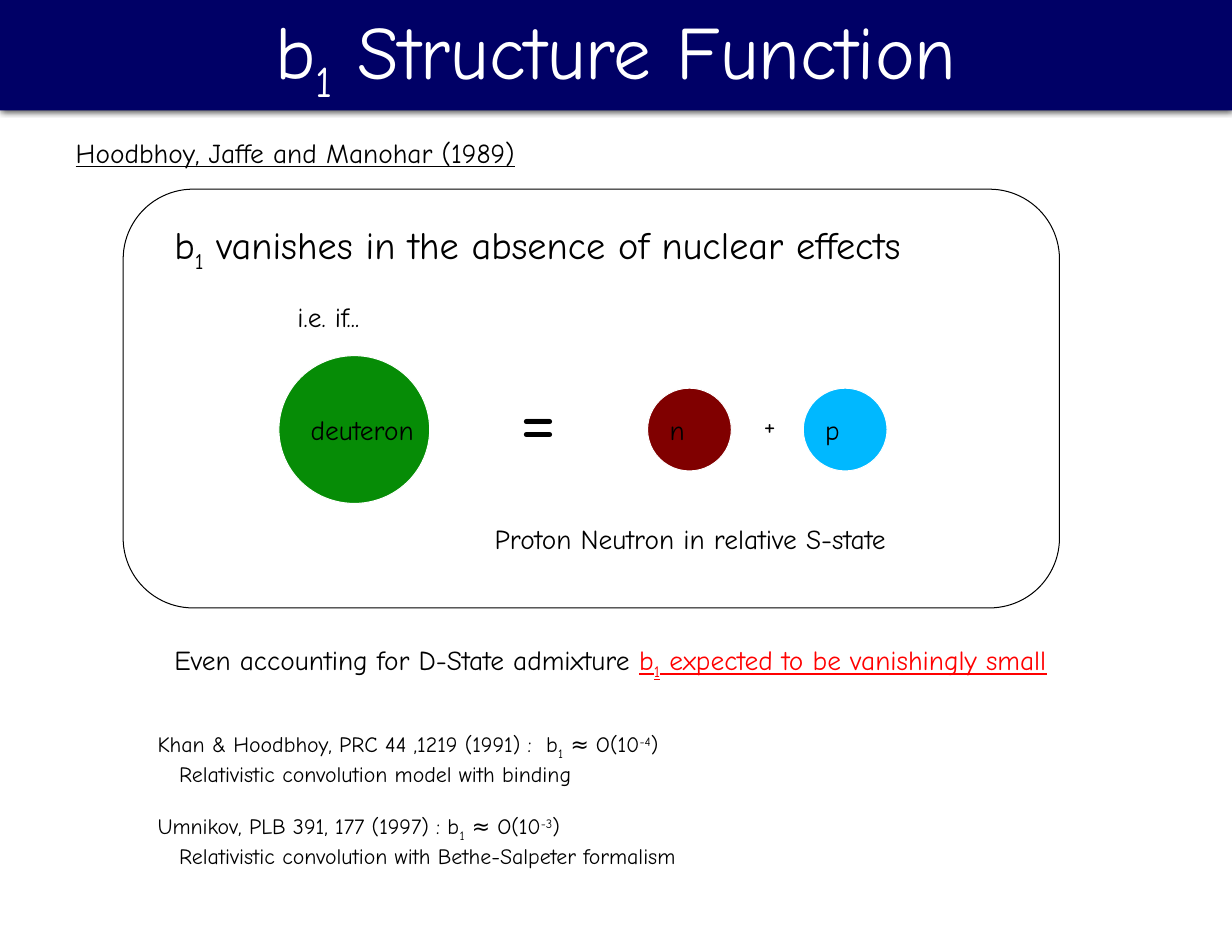
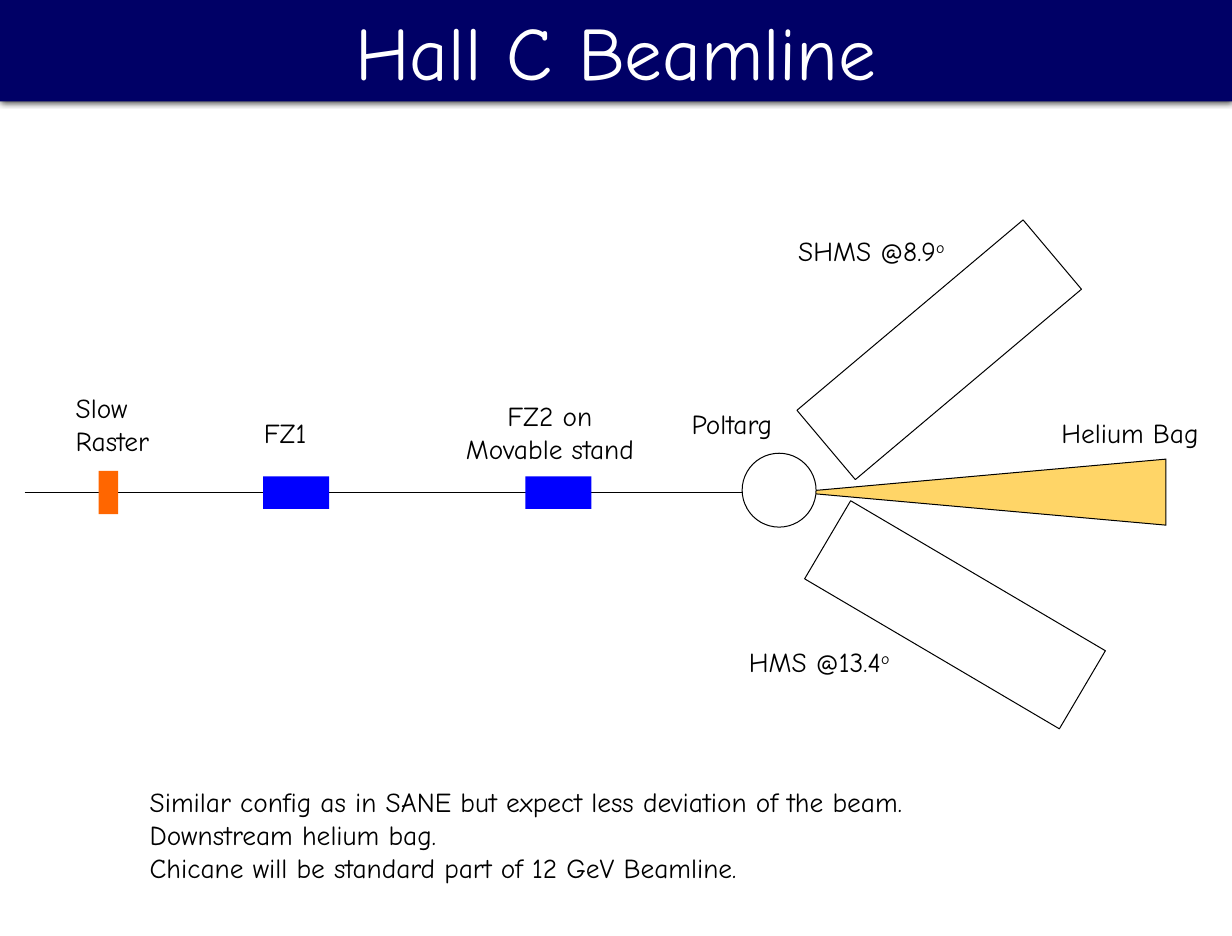
from lxml import etree
from pptx import Presentation
from pptx.dml.color import RGBColor
from pptx.enum import shapes, text
from pptx.oxml.ns import qn
from pptx.util import Inches, Pt

FONT = "Comic Neue"
NAVY, WHITE, BLACK, RED = "000066", "FFFFFF", "000000", "FF0000"
GREEN, MAROON, SKY = "068C06", "800000", "00B8FF"
ORANGE, BLUE, GOLD = "FF6600", "0000FF", "FFD567"
SLIDE_WIDTH, SLIDE_HEIGHT = 12.5, 9.5
KIND = shapes.MSO_SHAPE
CENTER, LEFT = text.PP_ALIGN.CENTER, text.PP_ALIGN.LEFT
BASELINES = {"sub": "-25000", "sup": "30000"}

SUBSCRIPT_ONE = ("1", "sub")

STRUCTURE_TITLE = ["b", SUBSCRIPT_ONE, " Structure Function"]
STRUCTURE_TEXTS = [
    ((0.67, 1.33, 4.85, 0.44), 20, [[("Hoodbhoy, Jaffe and Manohar (1989)", "underline")]]),
    ((1.67, 2.2, 8.22, 0.5), 28,
     [["b", SUBSCRIPT_ONE, " vanishes in the absence of nuclear effects"]]),
    ((2.92, 3, 1.2, 0.44), 20, [["i.e. if..."]]),
    ((5.17, 3.67, 0.8, 1.12), 60, [["="]]),
    ((7.65, 4.09, 0.4, 0.44), 20, [["+"]]),
    ((4.92, 5.25, 4.48, 0.44), 20, [["Proton Neutron in relative S-state"]]),
    ((1.67, 6.48, 9.72, 0.44), 20,
     [["Even accounting for D-State admixture ", ("b", "red underline"),
       ("1", "red underline sub"), (" expected to be vanishingly small", "red underline")]]),
]
NUCLEI = [
    ("deuteron", (2.83, 3.61, 1.53, 1.5), GREEN),
    ("n", (6.57, 3.94, 0.85, 0.84), MAROON),
    ("p", (8.15, 3.94, 0.85, 0.84), SKY),
]
PREDICTIONS = [
    ("Khan & Hoodbhoy, PRC 44 ,1219 (1991) :  b", "-4",
     "Relativistic convolution model with binding"),
    ("Umnikov, PLB 391, 177 (1997) : b", "-3",
     "Relativistic convolution with Bethe-Salpeter formalism"),
]

BEAM_TITLE = ["Hall C Beamline"]
BEAM_Y = 5
BEAM_TEXTS = [
    ((0.67, 3.92, 1.2, 0.78), LEFT, [["Slow"], ["Raster"]]),
    ((2.58, 4.17, 0.8, 0.44), LEFT, [["FZ1"]]),
    ((4.58, 4, 2, 0.78), CENTER, [["FZ2 on"], ["Movable stand"]]),
    ((6.92, 4.08, 1.2, 0.44), LEFT, [["Poltarg"]]),
    ((10.67, 4.17, 1.75, 0.44), LEFT, [["Helium Bag"]]),
    ((8, 2.33, 1.85, 0.44), LEFT, [["SHMS @8.9", ("o", "sup")]]),
    ((7.5, 6.5, 1.85, 0.44), LEFT, [["HMS @13.4", ("o", "sup")]]),
    ((1.42, 7.92, 8.39, 1.11), LEFT,
     [["Similar config as in SANE but expect less deviation of the beam."],
      ["Downstream helium bag."],
      ["Chicane will be standard part of 12 GeV Beamline."]]),
]
BEAM_ELEMENTS = [
    (1, 0.2, 0.44, ORANGE),
    (2.67, 0.67, 0.33, BLUE),
    (5.33, 0.67, 0.33, BLUE),
]
DETECTORS = [
    (KIND.ISOSCELES_TRIANGLE, (9.62, 3.12, 0.67, 3.75), GOLD, 270),
    (KIND.RECTANGLE, (8.03, 3.09, 3, 0.92), None, 319.9),
    (KIND.RECTANGLE, (8.19, 5.78, 3, 0.92), None, 30.5),
    (KIND.OVAL, (7.53, 4.6, 0.75, 0.75), WHITE, 0),
]


def color(value):
    return RGBColor.from_string(value)


def write_runs(paragraph, parts, size, ink=BLACK):
    for part in parts:
        words, style = (part, "") if isinstance(part, str) else part
        styles = style.split()
        run = paragraph.add_run()
        run.text = words
        font = run.font
        font.name, font.size = FONT, Pt(size)
        font.color.rgb = color(RED if "red" in styles else ink)
        if "underline" in styles:
            font.underline = True
        for name in BASELINES.keys() & set(styles):
            font._element.set("baseline", BASELINES[name])


def add_text(slide, box, size, paragraphs, align=LEFT):
    frame = slide.shapes.add_textbox(*map(Inches, box)).text_frame
    frame.word_wrap = True
    for index, parts in enumerate(paragraphs):
        paragraph = frame.add_paragraph() if index else frame.paragraphs[0]
        paragraph.alignment = align
        write_runs(paragraph, parts, size)
    return frame


def add_shape(slide, kind, box, fill=None, line=None, rotation=0):
    shape = slide.shapes.add_shape(kind, *map(Inches, box))
    shape.rotation = rotation
    if fill:
        shape.fill.solid()
        shape.fill.fore_color.rgb = color(fill)
    else:
        shape.fill.background()
    if line:
        shape.line.color.rgb = color(line)
        shape.line.width = Pt(0.75)
    else:
        shape.line.fill.background()
    shape.shadow.inherit = False
    return shape


def add_slide(presentation, title, band_height):
    slide = presentation.slides.add_slide(presentation.slide_layouts[6])
    band = add_shape(slide, KIND.RECTANGLE, (0, 0, SLIDE_WIDTH, band_height), NAVY)
    effects = band._element.spPr.find(qn("a:effectLst"))
    shadow = etree.SubElement(effects, qn("a:outerShdw"), blurRad=str(Pt(5)), dist="0", dir="0")
    tint = etree.SubElement(shadow, qn("a:srgbClr"), val=BLACK)
    etree.SubElement(tint, qn("a:alpha"), val="75000")
    frame = band.text_frame
    frame.vertical_anchor = text.MSO_ANCHOR.MIDDLE
    frame.margin_top = frame.margin_bottom = Inches(0.06)
    frame.paragraphs[0].alignment = CENTER
    write_runs(frame.paragraphs[0], title, 55, WHITE)
    return slide


def build_structure_slide(presentation):
    slide = add_slide(presentation, STRUCTURE_TITLE, 1.12)
    frame = add_shape(slide, KIND.ROUNDED_RECTANGLE, (1.25, 1.92, 9.5, 4.25), line=BLACK)
    frame.adjustments[0] = 0.167
    for name, box, fill in NUCLEI:
        nucleus = add_shape(slide, KIND.OVAL, box, fill, WHITE)
        label = nucleus.text_frame
        label.word_wrap = False
        label.vertical_anchor = text.MSO_ANCHOR.MIDDLE
        label.paragraphs[0].alignment = LEFT
        write_runs(label.paragraphs[0], [name], 20)
    for box, size, paragraphs in STRUCTURE_TEXTS:
        add_text(slide, box, size, paragraphs)

    lines = []
    for citation, exponent, method in PREDICTIONS:
        lines.append([citation, SUBSCRIPT_ONE, " ≈ O(10", (exponent, "sup"), ")"])
        lines.append([method])
    predictions = add_text(slide, (1.5, 7.37, 5.94, 1.63), 16, lines).paragraphs
    for method in predictions[1::2]:
        method._p.get_or_add_pPr().set("marL", str(Inches(0.22)))
    for citation in predictions[2::2]:
        citation.space_before = Pt(19)


def build_beamline_slide(presentation):
    slide = add_slide(presentation, BEAM_TITLE, 1.03)
    ends = map(Inches, (0.25, BEAM_Y, 7.83, BEAM_Y))
    beam = slide.shapes.add_connector(shapes.MSO_CONNECTOR.STRAIGHT, *ends)
    beam.line.color.rgb = color(BLACK)
    beam.line.width = Pt(0.75)
    etree.SubElement(beam._element.spPr, qn("a:effectLst"))
    for left, width, height, fill in BEAM_ELEMENTS:
        add_shape(slide, KIND.RECTANGLE, (left, BEAM_Y - height / 2, width, height), fill)
    for kind, box, fill, rotation in DETECTORS:
        add_shape(slide, kind, box, fill, BLACK, rotation)
    for box, align, paragraphs in BEAM_TEXTS:
        add_text(slide, box, 20, paragraphs, align)


def main():
    presentation = Presentation()
    presentation.slide_width = Inches(SLIDE_WIDTH)
    presentation.slide_height = Inches(SLIDE_HEIGHT)
    build_structure_slide(presentation)
    build_beamline_slide(presentation)
    presentation.save("out.pptx")


if __name__ == "__main__":
    main()
